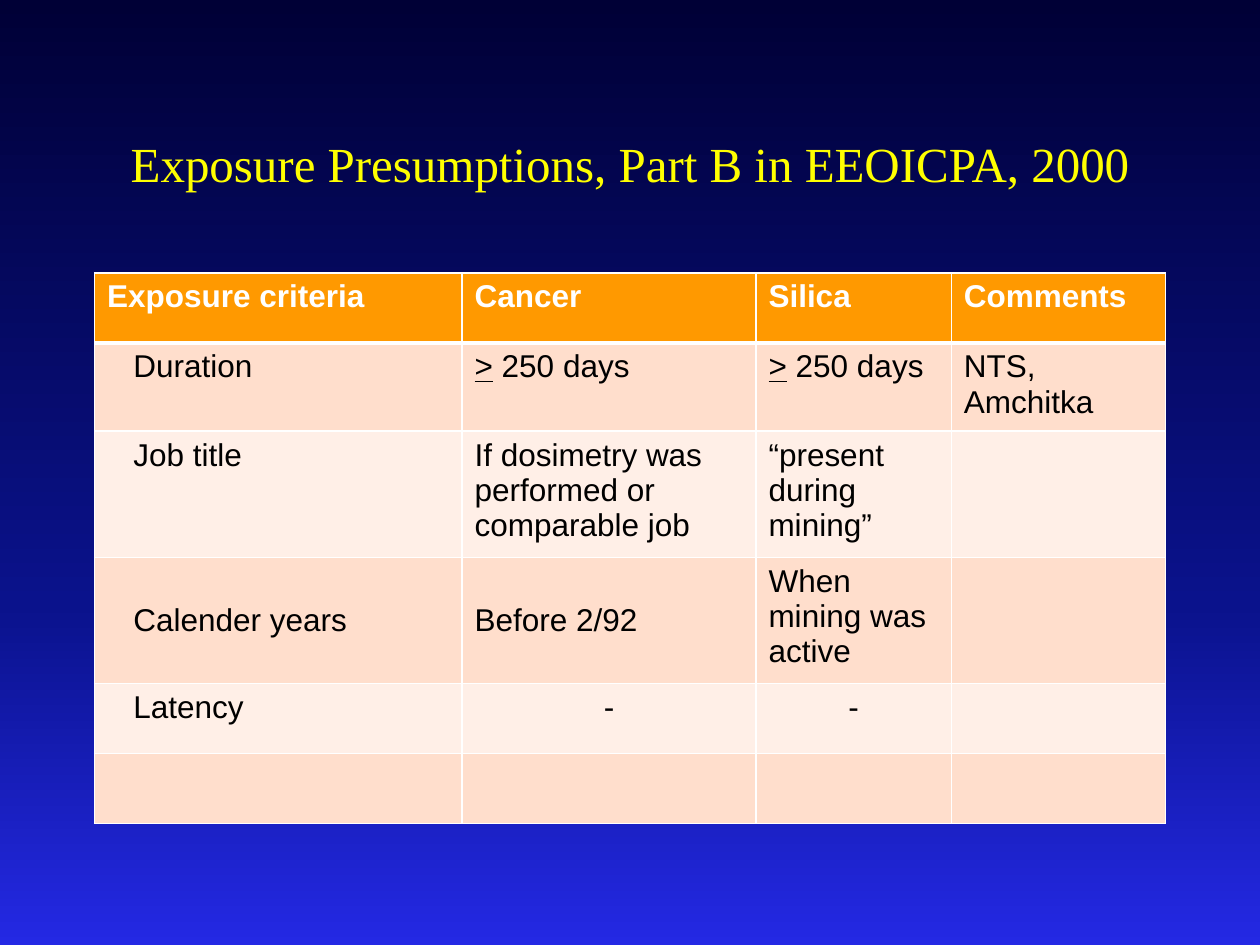
import copy

import pptx
import pptx.dml.color
import pptx.enum.text
import pptx.oxml
import pptx.oxml.ns
import pptx.util

Pt = pptx.util.Pt
ALIGN = pptx.enum.text.PP_ALIGN
ANCHOR = pptx.enum.text.MSO_ANCHOR

COLORS = {
    "top": "000036", "middle": "0A128C", "bottom": "2429E4",
    "title": "FFFF00", "header": "FF9900", "odd": "FFDECC", "even": "FFEFE7",
    "white": "FFFFFF", "black": "000000",
}


def rgb(name):
    return pptx.dml.color.RGBColor.from_string(COLORS[name])


def add_run(p, text, color, **formats):
    r = p.add_run()
    r.text = text
    r.font.color.rgb = rgb(color)
    for key, value in formats.items():
        setattr(r.font, key, value)


prs = pptx.Presentation()
prs.slide_width, prs.slide_height = Pt(720), Pt(540)
s = prs.slides.add_slide(prs.slide_layouts[6])

# Background gradient, running downwards
fill = s.background.fill
fill.gradient()
fill.gradient_angle = 270
stops = s.element.xpath(".//a:gsLst")[0]
stops.append(copy.deepcopy(stops[0]))
for stop, position, name in zip(fill.gradient_stops, (0, 0.64, 1), ("top", "middle", "bottom")):
    stop.position = position
    stop.color.rgb = rgb(name)

# Title
sp = s.shapes.add_textbox(Pt(54), Pt(48), Pt(612), Pt(90))
tf = sp.text_frame
tf.word_wrap = True
tf.vertical_anchor = ANCHOR.MIDDLE
p = tf.paragraphs[0]
p.alignment = ALIGN.CENTER
add_run(p, "Exposure Presumptions, Part B in EEOICPA, 2000", "title",
        name="Times New Roman", size=Pt(28))

# Table
rows = [
    ["Exposure criteria", "Cancer", "Silica", "Comments"],
    ["Duration", "> 250 days", "> 250 days", "NTS, Amchitka"],
    ["Job title", "If dosimetry was performed or comparable job", "“present during mining”", ""],
    ["Calender years", "Before 2/92", "When mining was active", ""],
    ["Latency", "-", "-", ""],
    ["", "", "", ""],
]
widths = [210, 168, 111.6, 122.4]
table = s.shapes.add_table(len(rows), len(widths), Pt(54), Pt(156), Pt(612), Pt(240)).table
for column, width in zip(table.columns, widths):
    column.width = Pt(width)

for i, row in enumerate(rows):
    table.rows[i].height = Pt(40)
    background = "header" if i == 0 else "odd" if i % 2 else "even"
    body = {"name": "Arial", "size": Pt(18), "bold": i == 0}
    color = "black" if i else "white"
    for j, text in enumerate(row):
        cell = table.cell(i, j)

        # White borders, with a heavy rule under the header
        line_widths = {"lnL": 1, "lnR": 1, "lnT": 3 if i == 1 else 1, "lnB": 3 if i == 0 else 1}
        for tag, width in line_widths.items():
            cell._tc.get_or_add_tcPr().append(pptx.oxml.parse_xml(
                f'<a:{tag} {pptx.oxml.ns.nsdecls("a")} w="{Pt(width)}"><a:solidFill>'
                f'<a:srgbClr val="{COLORS["white"]}"/></a:solidFill></a:{tag}>'))
        cell.fill.solid()
        cell.fill.fore_color.rgb = rgb(background)

        # Row labels are indented; the calendar row is centred vertically
        if i and j == 0:
            cell.margin_left = Pt(22.2)
        if text in ("Calender years", "Before 2/92"):
            cell.vertical_anchor = ANCHOR.MIDDLE

        p = cell.text_frame.paragraphs[0]
        p.font.size = Pt(18)
        if text == "-":
            p.alignment = ALIGN.CENTER
        if text.startswith(">"):
            add_run(p, ">", color, underline=True, **body)
            text = text[1:]
        if text:
            add_run(p, text, color, **body)

prs.save("out.pptx")
